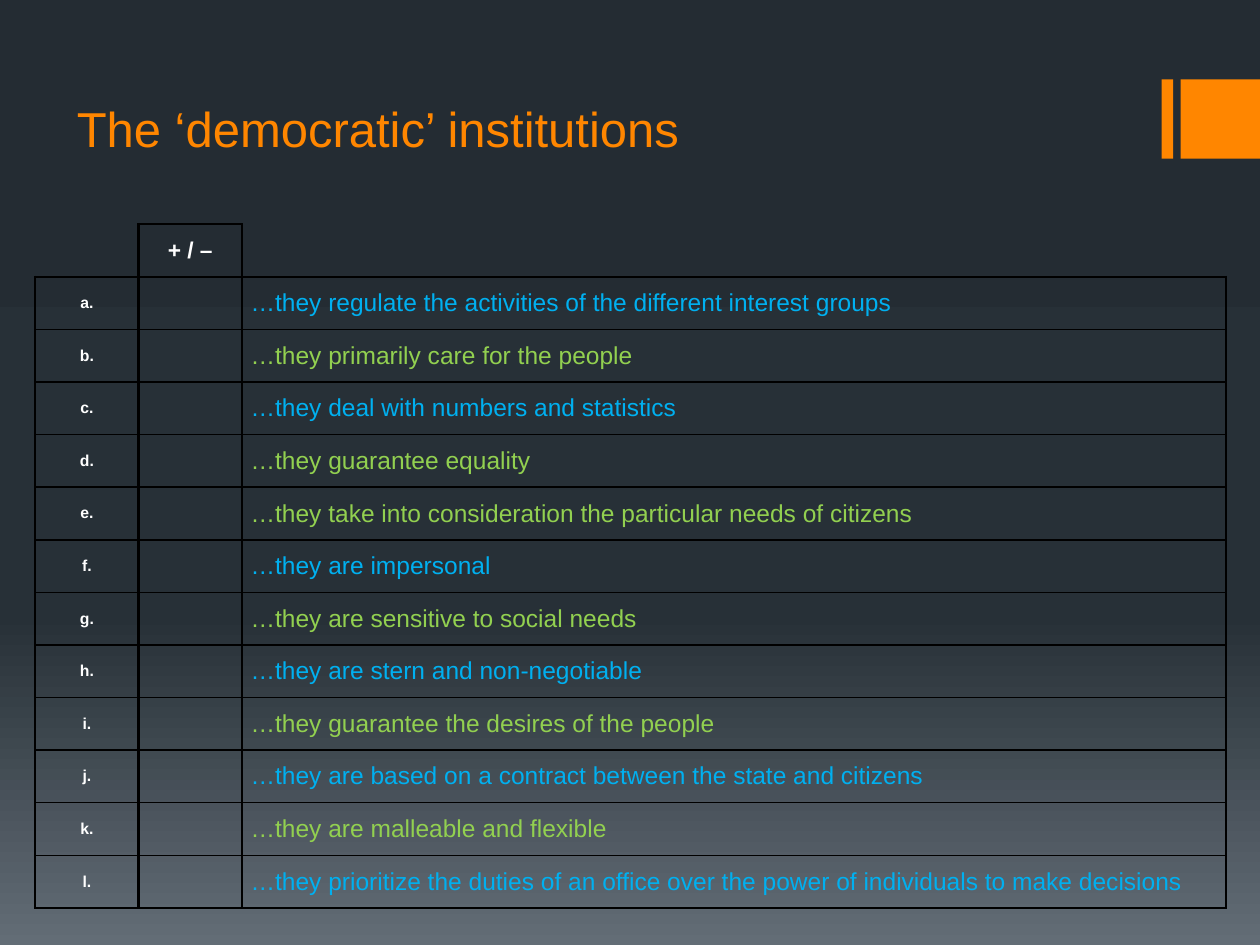
from copy import deepcopy

from lxml.etree import SubElement
from pptx import Presentation
from pptx.dml.color import RGBColor
from pptx.enum.shapes import MSO_SHAPE
from pptx.enum.text import MSO_ANCHOR as Anchor, PP_ALIGN as Align
from pptx.oxml.ns import qn
from pptx.util import Inches, Pt

COLORS = {
    "top": "242C33", "mid": "273037", "low": "636D76", "accent": "FF8600",
    "white": "FFFFFF", "line": "000000", "blue": "00B0F0", "green": "92D050",
}
ITEMS = [
    ("blue", "…they regulate the activities of the different interest groups"),
    ("green", "…they primarily care for the people"),
    ("blue", "…they deal with numbers and statistics"),
    ("green", "…they guarantee equality"),
    ("green", "…they take into consideration the particular needs of citizens"),
    ("blue", "…they are impersonal"),
    ("green", "…they are sensitive to social needs"),
    ("blue", "…they are stern and non-negotiable"),
    ("green", "…they guarantee the desires of the people"),
    ("blue", "…they are based on a contract between the state and citizens"),
    ("green", "…they are malleable and flexible"),
    ("blue", "…they prioritize the duties of an office over the power of "
             "individuals to make decisions"),
]


def rgb(name):
    """Return the named colour."""
    return RGBColor.from_string(COLORS[name])


def style(para, size, color, align, bold=False):
    """Format a whole paragraph."""
    para.alignment = align
    font = para.font
    font.name, font.size, font.bold = "Arial", Pt(size), bold
    font.color.rgb = rgb(color)


def paint_back(slide):
    """Fill the background with a three-stop vertical gradient."""
    fill = slide.background.fill
    fill.gradient()
    fill.gradient_angle = 270
    stops = next(slide.element.iter(qn("a:gsLst")))
    stops.append(deepcopy(stops[-1]))
    shades = [(0, "top"), (0.65, "mid"), (1, "low")]
    for stop, (place, name) in zip(fill.gradient_stops, shades):
        stop.position = place
        stop.color.rgb = rgb(name)


def add_mark(slide, left, top, width, height):
    """Draw the thin bar and the square at the slide's right edge."""
    for x, wide in [(left, Inches(0.09)), (left + width - height, height)]:
        bar = slide.shapes.add_shape(MSO_SHAPE.RECTANGLE, x, top, wide, height)
        bar.shadow.inherit = False
        bar.fill.solid()
        bar.fill.fore_color.rgb = rgb("accent")
        bar.line.fill.background()


def set_title(slide, left, top, width, height):
    """Place and format the title."""
    title = slide.shapes.title
    title.left, title.top, title.width, title.height = left, top, width, height
    frame = title.text_frame
    frame.text = "The ‘democratic’ institutions"
    frame.vertical_anchor = Anchor.BOTTOM
    style(frame.paragraphs[0], 28, "accent", Align.LEFT)


def set_edge(cell, side, width):
    """Give one cell side a line, or none when the width is zero."""
    props = cell._tc.get_or_add_tcPr()
    edge = SubElement(props, qn(f"a:ln{side}"), w=str(Pt(width)))
    if width:
        fill = SubElement(edge, qn("a:solidFill"))
        SubElement(fill, qn("a:srgbClr"), val=COLORS["line"])
    else:
        SubElement(edge, qn("a:noFill"))


def frame_cell(cell, row, col, last):
    """Draw the cell's sides, leaving the top corners of the table open."""
    corner = row == 0 and col != 1
    widths = {
        "L": 0 if corner and col == 0 else 1.5,
        "R": 0 if corner and col == 2 else 1.5,
        "T": 0 if corner else 1.5 if row < 2 else 1,
        "B": 1.5 if row in (0, last) else 1,
    }
    for side, width in widths.items():
        set_edge(cell, side, width)
    cell.fill.background()


def add_grid(slide, left, top, width, height):
    """Build the table of lettered statements."""
    count = len(ITEMS) + 1
    table = slide.shapes.add_table(count, 3, left, top, width, height).table
    table.first_row = table.horz_banding = False
    slim = Inches(0.82)
    for col, wide in zip(table.columns, [slim, slim, width - 2 * slim]):
        col.width = wide
    for r, row in enumerate(table.rows):
        row.height = height // count
        for c, cell in enumerate(row.cells):
            cell.margin_left = cell.margin_right = Inches(0.07)
            cell.margin_top = cell.margin_bottom = 0
            cell.vertical_anchor = Anchor.MIDDLE
            frame_cell(cell, r, c, count - 1)

    def write(row, col, text, *look):
        cell = table.cell(row, col)
        cell.text = text
        style(cell.text_frame.paragraphs[0], *look)

    write(0, 1, "+ / –", 13, "white", Align.CENTER, True)
    for r, (color, text) in enumerate(ITEMS, 1):
        write(r, 0, f"{'abcdefghijkl'[r - 1]}.", 9, "white", Align.CENTER, True)
        write(r, 2, text, 14, color, Align.JUSTIFY)


def main():
    """Build and save the slide."""
    deck = Presentation()
    deck.slide_width, deck.slide_height = Inches(10), Inches(7.5)
    slide = deck.slides.add_slide(deck.slide_layouts[5])
    paint_back(slide)
    add_mark(slide, Inches(9.22), Inches(0.63), Inches(0.78), Inches(0.63))
    set_title(slide, Inches(0.51), Inches(0.36), Inches(8), Inches(0.94))
    add_grid(slide, Inches(0.28), Inches(1.78), Inches(9.45), Inches(5.43))
    deck.save("out.pptx")


if __name__ == "__main__":
    main()
